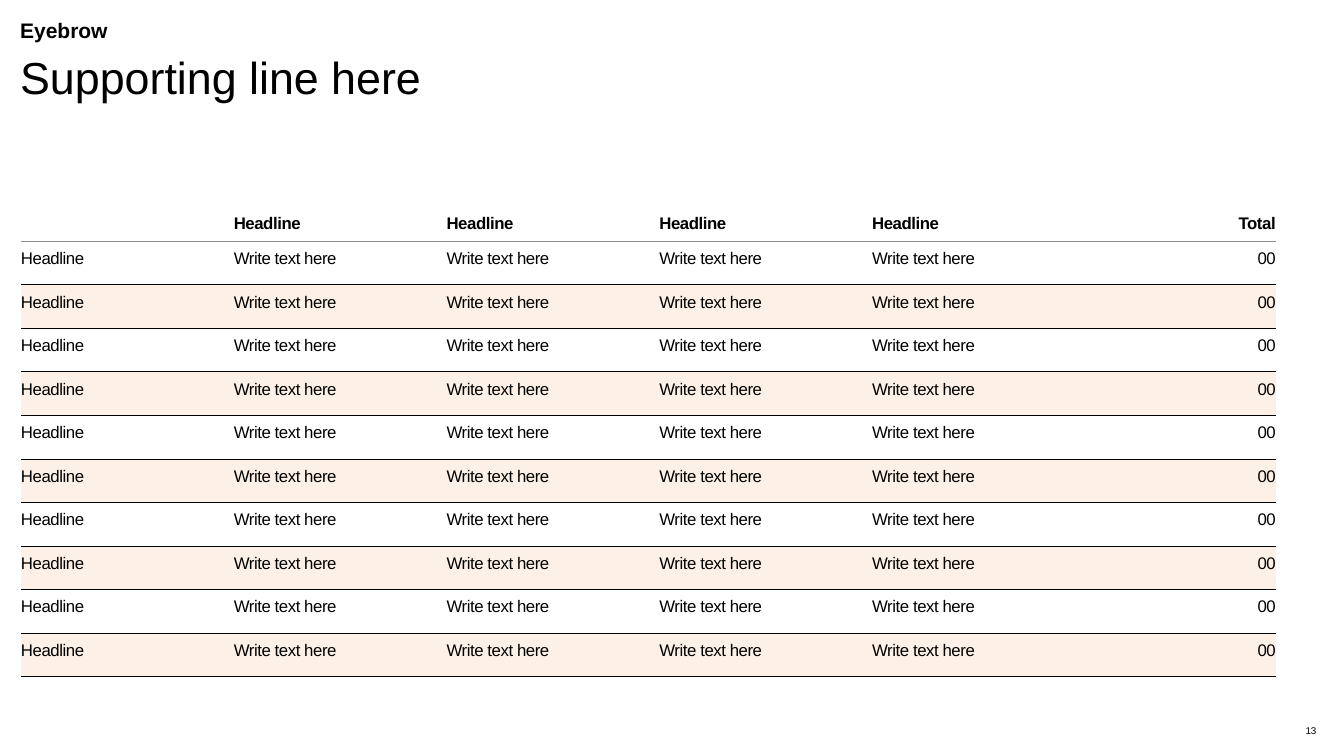
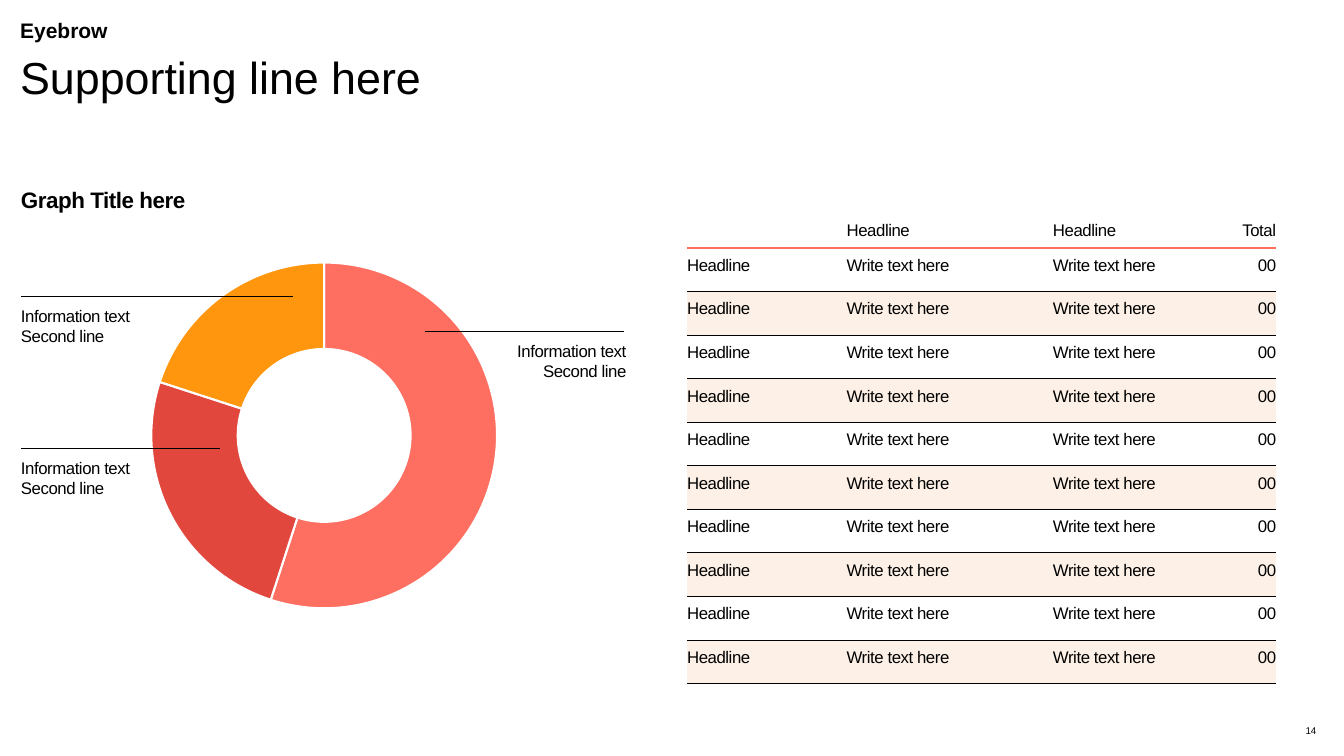
import pptx
import pptx.chart.data
import pptx.dml.color
import pptx.enum.chart
import pptx.enum.shapes
import pptx.enum.text
import pptx.oxml
import pptx.oxml.ns
import pptx.util
from lxml import etree

Pt = pptx.util.Pt
ALIGN = pptx.enum.text.PP_ALIGN
ANCHOR = pptx.enum.text.MSO_ANCHOR
qn = pptx.oxml.ns.qn

FONT = "Arial"
COLORS = {
    "text": "000000",
    "white": "FFFFFF",
    "band": "FDF1E7",
    "gray": "8C8C8C",
    "coral": "FE6F61",
    "red": "E1473D",
    "orange": "FF960E",
}
LEFT = 14.4
ROW_HEIGHT = 31.1
BODY_ROWS = 10
CELL_MARGIN = 5.76
TIGHT = -0.3


def rgb(name):
    return pptx.dml.color.RGBColor.from_string(COLORS[name])


# Text
def add_text(paragraph, text, size, bold=False, spacing=0, align=ALIGN.LEFT):
    paragraph.alignment = align
    run = paragraph.add_run()
    run.text = text
    run.font.name = FONT
    run.font.size = Pt(size)
    run.font.bold = bold
    run.font.color.rgb = rgb("text")
    if spacing:
        run.font._element.set("spc", str(round(spacing * 100)))


def fill_box(shape, box, lines, size, anchor=ANCHOR.TOP, line_spacing=None, **style):
    shape.left, shape.top, shape.width, shape.height = map(Pt, box)
    frame = shape.text_frame
    frame.word_wrap = True
    frame.auto_size = pptx.enum.text.MSO_AUTO_SIZE.NONE
    frame.vertical_anchor = anchor
    frame.margin_left = frame.margin_top = frame.margin_right = frame.margin_bottom = 0
    for index, line in enumerate(lines):
        paragraph = frame.add_paragraph() if index else frame.paragraphs[0]
        paragraph.line_spacing = line_spacing
        add_text(paragraph, line, size, **style)


def add_box(slide, box, lines, size, **style):
    shape = slide.shapes.add_textbox(*map(Pt, box))
    fill_box(shape, box, lines, size, **style)


# Shared slide frame: eyebrow title, supporting line, page number
def add_slide(presentation, page):
    slide = presentation.slides.add_slide(presentation.slide_layouts[5])
    fill_box(slide.shapes.title, (LEFT, 14.4, 593, 17.3), ["Eyebrow"], 15,
             line_spacing=0.9, bold=True)
    add_box(slide, (LEFT, 39.6, 593, 52), ["Supporting line here"], 32, line_spacing=0.9)
    add_box(slide, (927.4, 508.3, 18, 18), [str(page)], 7,
            anchor=ANCHOR.BOTTOM, align=ALIGN.CENTER)
    return slide


# Table
def set_borders(cell, top=None, bottom=None):
    properties = cell._tc.get_or_add_tcPr()
    for tag, border in (("a:lnL", None), ("a:lnR", None), ("a:lnT", top), ("a:lnB", bottom)):
        line = etree.SubElement(properties, qn(tag))
        if border is None:
            etree.SubElement(line, qn("a:noFill"))
            continue
        color, width = border
        line.set("w", str(int(Pt(width))))
        fill = etree.SubElement(line, qn("a:solidFill"))
        etree.SubElement(fill, qn("a:srgbClr")).set("val", COLORS[color])


def add_table(slide, left, top, widths, header_line, header_bold):
    last = len(widths) - 1
    header = [""] + ["Headline"] * (last - 1) + ["Total"]
    body = ["Headline"] + ["Write text here"] * (last - 1) + ["00"]
    rows = [header] + [body] * BODY_ROWS
    rules = [None, header_line] + [("text", 0.5)] * BODY_ROWS

    table = slide.shapes.add_table(
        len(rows), len(widths), Pt(left), Pt(top),
        Pt(sum(widths)), Pt(ROW_HEIGHT * len(rows))).table
    table.first_row = table.horz_banding = False
    for column, width in zip(table.columns, widths):
        column.width = Pt(width)
    for row_index, texts in enumerate(rows):
        table.rows[row_index].height = Pt(ROW_HEIGHT)
        for column_index, text in enumerate(texts):
            cell = table.cell(row_index, column_index)
            set_borders(cell, rules[row_index], rules[row_index + 1])
            if row_index and row_index % 2 == 0:
                cell.fill.solid()
                cell.fill.fore_color.rgb = rgb("band")
            else:
                cell.fill.background()
            if not text:
                continue
            cell.margin_left = cell.margin_right = 0
            cell.margin_top = cell.margin_bottom = Pt(CELL_MARGIN)
            cell.vertical_anchor = ANCHOR.TOP if row_index else ANCHOR.BOTTOM
            add_text(cell.text_frame.paragraphs[0], text, 12,
                     bold=header_bold and row_index == 0, spacing=TIGHT,
                     align=ALIGN.RIGHT if column_index == last else ALIGN.LEFT)


# Doughnut chart
def add_doughnut(slide, left, top, width, height, diameter):
    data = pptx.chart.data.CategoryChartData()
    data.categories = ["1", "2", "3"]
    data.add_series("Series 1", (55, 25, 20))
    chart = slide.shapes.add_chart(
        pptx.enum.chart.XL_CHART_TYPE.DOUGHNUT,
        Pt(left), Pt(top), Pt(width), Pt(height), data).chart
    chart.has_legend = chart.has_title = False
    chart.font.name = FONT
    chart.font.size = Pt(10)
    chart.font.color.rgb = rgb("text")
    plot = chart.plots[0]
    plot.vary_by_categories = True
    for index, color in enumerate(("coral", "red", "orange")):
        slice_format = plot.series[0].points[index].format
        slice_format.fill.solid()
        slice_format.fill.fore_color.rgb = rgb(color)
        slice_format.line.color.rgb = rgb("white")
        slice_format.line.width = Pt(1.5)

    # Centre the ring at a fixed diameter
    plot_area = chart._chartSpace.find(".//" + qn("c:plotArea"))
    for old_layout in plot_area.findall(qn("c:layout")):
        plot_area.remove(old_layout)
    layout = etree.Element(qn("c:layout"))
    plot_area.insert(0, layout)
    manual = etree.SubElement(layout, qn("c:manualLayout"))
    share_x, share_y = diameter / width, diameter / height
    for tag, value in (("layoutTarget", "inner"), ("xMode", "edge"), ("yMode", "edge"),
                       ("x", (1 - share_x) / 2), ("y", (1 - share_y) / 2),
                       ("w", share_x), ("h", share_y)):
        etree.SubElement(manual, qn("c:" + tag)).set("val", str(value))


# Callout: a leader line with two lines of text under it
def add_callout(slide, left, top, width, align=ALIGN.LEFT):
    line = slide.shapes.add_connector(
        pptx.enum.shapes.MSO_CONNECTOR.STRAIGHT,
        Pt(left), Pt(top), Pt(left + width), Pt(top))
    line.line.color.rgb = rgb("text")
    line.line.width = Pt(0.75)
    etree.SubElement(line._element.spPr, qn("a:effectLst"))
    text_width = 86
    text_left = left + width + 2 - text_width if align == ALIGN.RIGHT else left
    add_box(slide, (text_left, top + 6.5, text_width, 42),
            ["Information text", "Second line"], 12, spacing=TIGHT, align=align)


def add_graph(slide, left, top):
    add_box(slide, (left, top, 440, 28), ["Graph Title here"], 16, bold=True, spacing=TIGHT)
    add_doughnut(slide, left + 51, top + 44.5, 331.2, 267.8, 247)
    add_callout(slide, left, top + 79, 194.4)
    add_callout(slide, left, top + 187.8, 142)
    add_callout(slide, left + 288.5, top + 104.3, 142, ALIGN.RIGHT)


def main():
    presentation = pptx.Presentation()
    presentation.slide_width = Pt(960)
    presentation.slide_height = Pt(540)

    slide = add_slide(presentation, 13)
    add_table(slide, 15, 141.2, [152] * 5 + [136.3], ("gray", 0.75), True)

    slide = add_slide(presentation, 14)
    add_table(slide, 490.8, 146.1, [114, 147.4, 118, 41.4], ("coral", 1), False)
    add_graph(slide, 15, 132.7)

    presentation.save("out.pptx")


if __name__ == "__main__":
    main()
